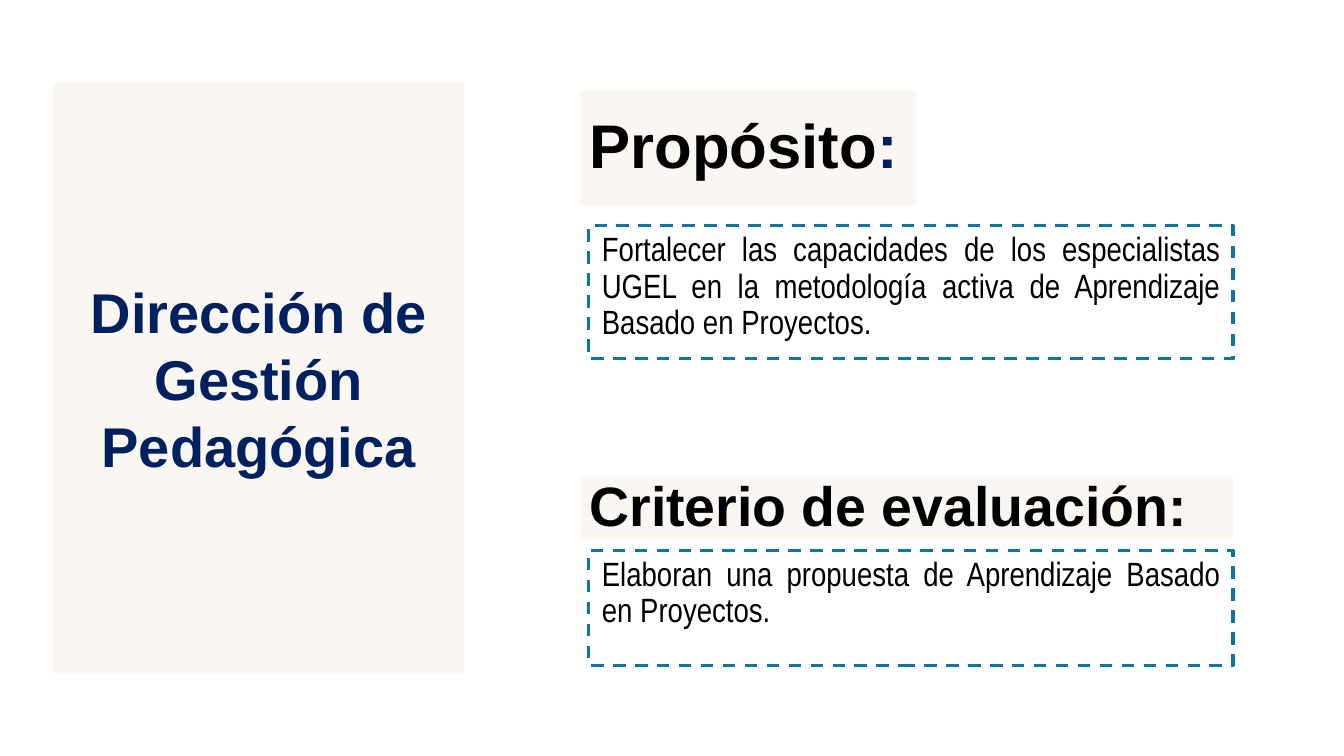
from dataclasses import dataclass

from pptx import Presentation, util as u
from pptx.dml.color import RGBColor
from pptx.enum import dml, shapes, text


@dataclass(frozen=True)
class Theme:
    cream: str = "FAF6F1"
    white: str = "FFFFFF"
    black: str = "000000"
    navy: str = "002060"
    teal: str = "0B769F"
    heading_font: str = "Arial"
    body_font: str = "Arial Narrow"
    purpose_size: float = 44
    panel_size: float = 40
    criterion_size: float = 39.6
    body_size: float = 24
    border: float = 2.25


class Deck:
    """Places styled boxes on a grid of 100 columns by 100 rows."""

    def __init__(self, theme):
        self.theme = theme
        self.prs = Presentation()
        self.prs.slide_width = u.Inches(13.33)
        self.prs.slide_height = u.Inches(7.5)
        self.slide = self.prs.slides.add_slide(self.prs.slide_layouts[6])

    def box(self, col, row, cols, rows, fill, margins=(0.1, 0.05)):
        dx, dy = self.prs.slide_width / 100, self.prs.slide_height / 100
        sp = self.slide.shapes.add_shape(
            shapes.MSO_SHAPE.RECTANGLE,
            round(col * dx), round(row * dy), round(cols * dx), round(rows * dy))
        sp.shadow.inherit = False
        sp.fill.solid()
        sp.fill.fore_color.rgb = RGBColor.from_string(fill)
        sp.line.fill.background()
        tf = sp.text_frame
        tf.word_wrap = True
        tf.margin_left = tf.margin_right = u.Inches(margins[0])
        tf.margin_top = tf.margin_bottom = u.Inches(margins[1])
        return sp

    def add_text(self, sp, parts, font, size, align, anchor, bold=False, spacing=0.9):
        """Fills the box with one paragraph of (words, colour) parts."""
        sp.text_frame.vertical_anchor = anchor
        p = sp.text_frame.paragraphs[0]
        p.alignment = align
        p.line_spacing = spacing
        p.font.name, p.font.size, p.font.bold = font, u.Pt(size), bold
        for words, color in parts:
            r = p.add_run()
            r.text = words
            r.font.color.rgb = RGBColor.from_string(color)
        return p

    def heading(self, place, parts, size, align=text.PP_ALIGN.LEFT, spacing=0.9):
        sp = self.box(*place, self.theme.cream)
        self.add_text(sp, parts, self.theme.heading_font, size, align,
                      text.MSO_ANCHOR.MIDDLE, bold=True, spacing=spacing)

    def dashed_note(self, place, words, space_before=0):
        t = self.theme
        sp = self.box(*place, t.white, margins=(0.13, 0.07))
        sp.line.color.rgb = RGBColor.from_string(t.teal)
        sp.line.width = u.Pt(t.border)
        sp.line.dash_style = dml.MSO_LINE.DASH
        p = self.add_text(sp, [(words, t.black)], t.body_font, t.body_size,
                          text.PP_ALIGN.JUSTIFY, text.MSO_ANCHOR.TOP)
        p.space_before = u.Pt(space_before)


def main():
    t = Theme()
    deck = Deck(t)
    heading_col, note_col, note_cols = 43.13, 43.81, 47.94

    deck.heading((heading_col, 63.07, 48.61, 8.27),
                 [("Criterio de evaluación:", t.black)], t.criterion_size)
    deck.dashed_note((note_col, 29.87, note_cols, 17.6),
                     "Fortalecer las capacidades de los especialistas UGEL en la "
                     "metodología activa de Aprendizaje Basado en Proyectos.")
    deck.heading((heading_col, 12, 25.06, 15.2),
                 [("Propósito", t.black), (":", t.navy)], t.purpose_size)
    deck.dashed_note((note_col, 72.8, note_cols, 15.2),
                     "Elaboran una propuesta de Aprendizaje Basado en Proyectos.",
                     space_before=10)
    deck.heading((3.98, 10.93, 30.53, 78.13),
                 [("Dirección de Gestión Pedagógica", t.navy)], t.panel_size,
                 align=text.PP_ALIGN.CENTER, spacing=1.0)

    deck.prs.save("out.pptx")


if __name__ == "__main__":
    main()
